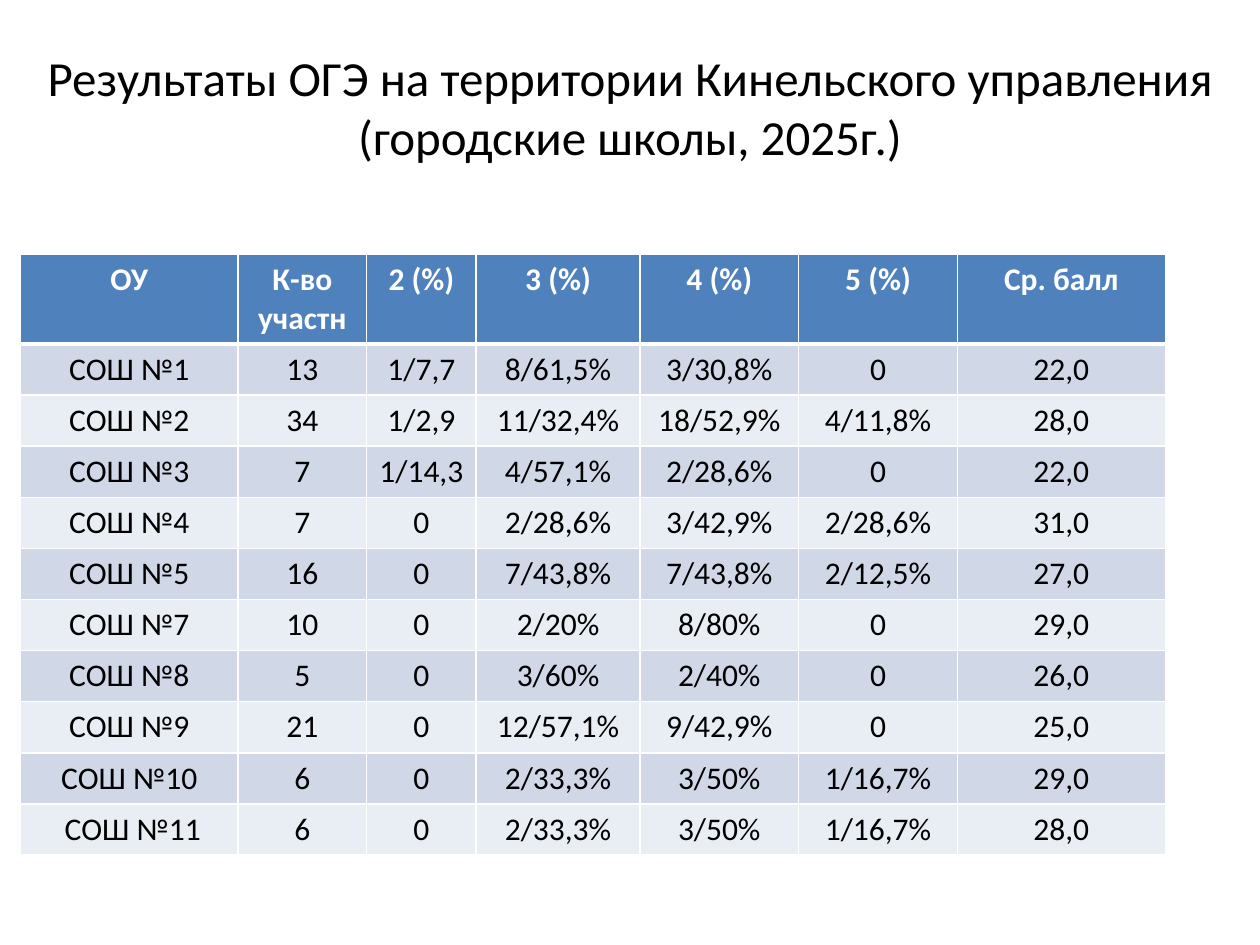
from lxml.etree import SubElement
from pptx import Presentation
from pptx.dml.color import RGBColor
from pptx.enum.text import MSO_ANCHOR, MSO_AUTO_SIZE, PP_ALIGN
from pptx.oxml.ns import qn
from pptx.util import Cm, Pt

FONT = "Calibri"
WHITE, BLACK = "FFFFFF", "000000"
HEADER_FILL = "4F81BD"
BAND_FILLS = ("D0D8E8", "E9EDF4")
THIN, THICK = Pt(1), Pt(3)

TITLE = "Результаты ОГЭ на территории Кинельского управления (городские школы, 2025г.)"
COLUMN_WIDTHS = (4.39, 2.59, 2.21, 3.3, 3.2, 3.2, 4.19)
ROW_HEIGHT = 1.03
HEADER_HEIGHT = 1.78
RESULTS = (
    ("ОУ", "К-во участн", "2 (%)", "3 (%)", "4 (%)", "5 (%)", "Ср. балл"),
    ("СОШ №1", "13", "1/7,7", "8/61,5%", "3/30,8%", "0", "22,0"),
    ("СОШ №2", "34", "1/2,9", "11/32,4%", "18/52,9%", "4/11,8%", "28,0"),
    ("СОШ №3", "7", "1/14,3", "4/57,1%", "2/28,6%", "0", "22,0"),
    ("СОШ №4", "7", "0", "2/28,6%", "3/42,9%", "2/28,6%", "31,0"),
    ("СОШ №5", "16", "0", "7/43,8%", "7/43,8%", "2/12,5%", "27,0"),
    ("СОШ №7", "10", "0", "2/20%", "8/80%", "0", "29,0"),
    ("СОШ №8", "5", "0", "3/60%", "2/40%", "0", "26,0"),
    ("СОШ №9", "21", "0", "12/57,1%", "9/42,9%", "0", "25,0"),
    ("СОШ №10", "6", "0", "2/33,3%", "3/50%", "1/16,7%", "29,0"),
    (" СОШ №11", "6", "0", "2/33,3%", "3/50%", "1/16,7%", "28,0"),
)


def rgb(color):
    return RGBColor.from_string(color)


def format_paragraph(paragraph, size, color, bold=False):
    paragraph.alignment = PP_ALIGN.CENTER
    font = paragraph.font
    font.name, font.size, font.bold = FONT, Pt(size), bold
    font.color.rgb = rgb(color)


def set_borders(cell, top, bottom):
    """Draw white cell borders; must run before the cell gets its fill."""
    properties = cell._tc.get_or_add_tcPr()
    for side, width in (("L", THIN), ("R", THIN), ("T", top), ("B", bottom)):
        line = SubElement(properties, qn(f"a:ln{side}"), w=str(width))
        fill = SubElement(line, qn("a:solidFill"))
        SubElement(fill, qn("a:srgbClr"), val=WHITE)


def fill_title(title):
    title.left, title.top = Cm(0.5), Cm(0.76)
    title.width, title.height = Cm(24.4), Cm(3.96)
    frame = title.text_frame
    frame.text = TITLE
    frame.word_wrap = True
    frame.auto_size = MSO_AUTO_SIZE.NONE
    frame.vertical_anchor = MSO_ANCHOR.MIDDLE
    frame.margin_bottom = Cm(1.32)
    format_paragraph(frame.paragraphs[0], 28, BLACK)


def fill_cell(cell, text, row):
    is_header = row == 0
    cell.text = text
    format_paragraph(cell.text_frame.paragraphs[0], 18,
                     WHITE if is_header else BLACK, is_header)
    set_borders(cell, top=THICK if row == 1 else THIN,
                bottom=THICK if is_header else THIN)
    cell.fill.solid()
    cell.fill.fore_color.rgb = rgb(HEADER_FILL if is_header else BAND_FILLS[(row - 1) % 2])


def add_results_table(slide):
    height = HEADER_HEIGHT + ROW_HEIGHT * (len(RESULTS) - 1)
    table = slide.shapes.add_table(
        len(RESULTS), len(COLUMN_WIDTHS),
        Cm(0.41), Cm(5.13), Cm(sum(COLUMN_WIDTHS)), Cm(height)).table
    for column, width in zip(table.columns, COLUMN_WIDTHS):
        column.width = Cm(width)
    for row, values in enumerate(RESULTS):
        table.rows[row].height = Cm(ROW_HEIGHT if row else HEADER_HEIGHT)
        for column, text in enumerate(values):
            fill_cell(table.cell(row, column), text, row)


def main():
    presentation = Presentation()
    presentation.slide_width, presentation.slide_height = Cm(25.4), Cm(19.05)
    slide = presentation.slides.add_slide(presentation.slide_layouts[5])
    fill_title(slide.shapes.title)
    add_results_table(slide)
    presentation.save("out.pptx")


if __name__ == "__main__":
    main()
